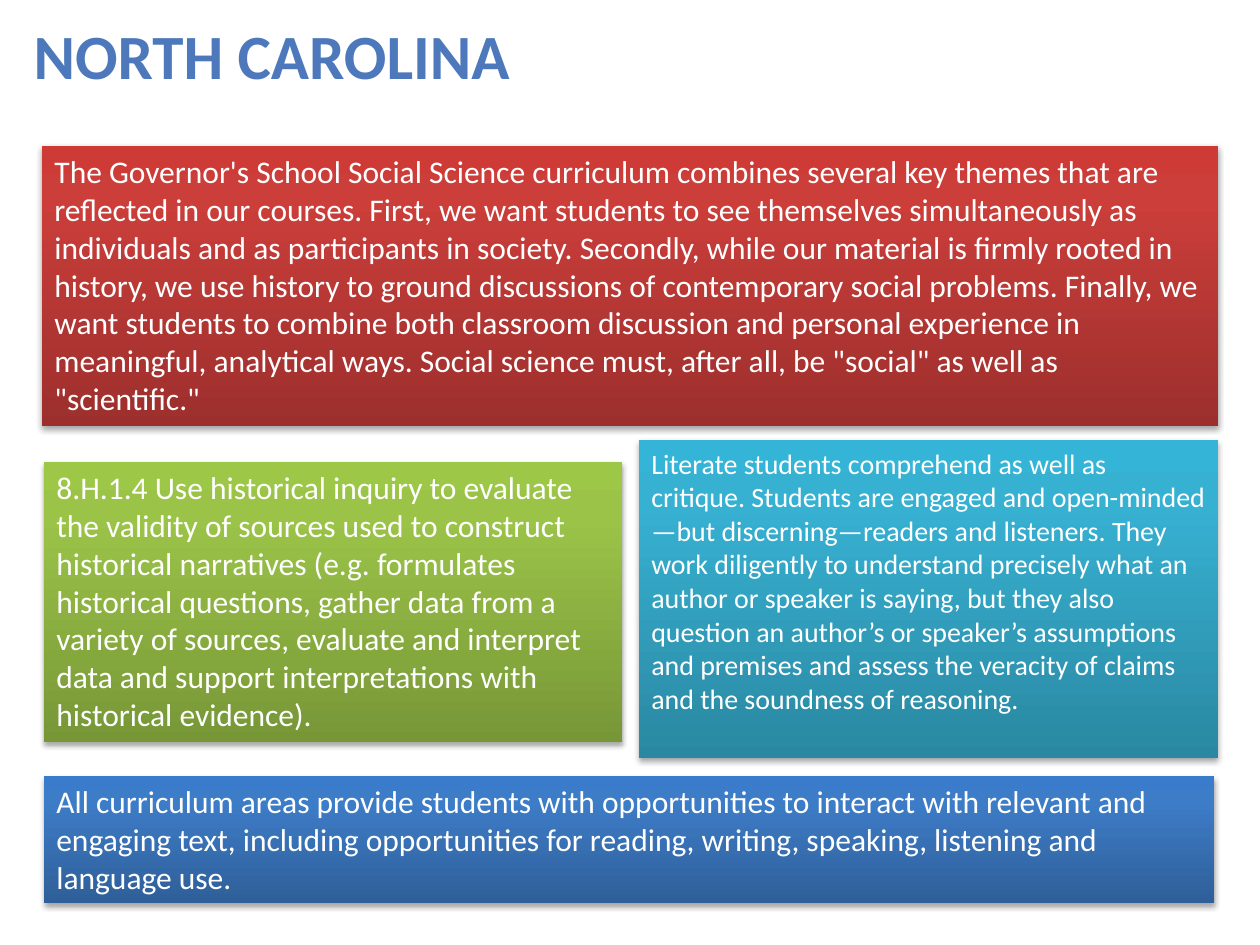
"""Build the North Carolina curriculum slide with its four standards panels."""
from dataclasses import dataclass

from lxml import etree
from pptx import Presentation
from pptx import util as u
from pptx.enum import shapes, text
from pptx.oxml import ns

SCALE = u.Inches(1) / 126
FONT = "Calibri"
COLOURS = {
    "white": "FFFFFF",
    "shadow": "000000",
    "red": ("9C2F2D", "CB3E3A", "CE3B37"),
    "green": ("779737", "9BC348", "9DC746"),
    "blue": ("2F5F99", "3D7CC7", "3A7CCB"),
    "teal": ("2A88A2", "37B1D2", "34B4D6"),
    "heading": ("7494C9", "4D79BC", "346AAA", "325F94", "315D91"),
}
PANEL_STOPS = (0, 80, 100)
HEADING_STOPS = (0, 49, 50, 92, 100)


@dataclass(frozen=True)
class Panel:
    left: int
    top: int
    width: int
    height: int
    colour: str
    wording: str
    size: int = 18


PANELS = (
    Panel(42, 146, 1176, 280, "red",
          "The Governor's School Social Science curriculum combines several key themes "
          "that are reflected in our courses. First, we want students to see themselves "
          "simultaneously as individuals and as participants in society. Secondly, while "
          "our material is firmly rooted in history, we use history to ground discussions "
          "of contemporary social problems. Finally, we want students to combine both "
          "classroom discussion and personal experience in meaningful, analytical ways. "
          "Social science must, after all, be \"social\" as well as \"scientific.\""),
    Panel(44, 462, 578, 280, "green",
          "8.H.1.4 Use historical inquiry to evaluate the validity of sources used to "
          "construct historical narratives (e.g. formulates historical questions, gather "
          "data from a variety of sources, evaluate and interpret data and support "
          "interpretations with historical evidence)."),
    Panel(44, 776, 1170, 127, "blue",
          "All curriculum areas provide students with opportunities to interact with "
          "relevant and engaging text, including opportunities for reading, writing, "
          "speaking, listening and language use."),
    Panel(639, 440, 579, 318, "teal",
          "Literate students comprehend as well as critique. Students are engaged and "
          "open-minded—but discerning—readers and listeners. They work diligently to "
          "understand precisely what an author or speaker is saying, but they also "
          "question an author’s or speaker’s assumptions and premises and assess the "
          "veracity of claims and the soundness of reasoning.", size=16),
)


def px(length: int) -> int:
    return round(length * SCALE)


def add_element(parent, tag: str, **attributes):
    return etree.SubElement(parent, ns.qn(tag), {k: str(v) for k, v in attributes.items()})


def set_gradient(fill, owner, colours: tuple, positions: tuple, angle: int) -> None:
    fill.gradient()
    fill.gradient_angle = angle
    stops = owner.find(f".//{ns.qn('a:gsLst')}")
    for stop in list(stops):
        stops.remove(stop)
    for colour, position in zip(colours, positions):
        stop = add_element(stops, "a:gs", pos=position * 1000)
        add_element(stop, "a:srgbClr", val=colour)


def add_shadow(shape) -> None:
    shape.shadow.inherit = False
    effects = shape.element.spPr.find(ns.qn("a:effectLst"))
    shadow = add_element(effects, "a:outerShdw", blurRad=u.Pt(3.1), dist=u.Pt(1.8),
                         dir=5400000, rotWithShape=0)
    colour = add_element(shadow, "a:srgbClr", val=COLOURS["shadow"])
    add_element(colour, "a:alpha", val=35000)


def write_text(shape, wording: str, *, size: int, colours: tuple, positions: tuple = (),
               bold: bool = False) -> None:
    frame = shape.text_frame
    frame.word_wrap = True
    frame.auto_size = text.MSO_AUTO_SIZE.NONE
    frame.vertical_anchor = text.MSO_ANCHOR.TOP
    paragraph = frame.paragraphs[0]
    paragraph.alignment = text.PP_ALIGN.LEFT
    run = paragraph.add_run()
    run.text = wording
    font = run.font
    font.name, font.size, font.bold = FONT, u.Pt(size), bold
    if positions:
        set_gradient(font.fill, paragraph._p, colours, positions, angle=270)
    else:
        font.fill.solid()
        font.fill.fore_color.rgb = font_colour(colours[0])


def font_colour(value: str):
    from pptx.dml.color import RGBColor
    return RGBColor.from_string(value)


def add_panel(slide, panel: Panel) -> None:
    box = slide.shapes.add_shape(shapes.MSO_SHAPE.RECTANGLE, px(panel.left), px(panel.top),
                                 px(panel.width), px(panel.height))
    set_gradient(box.fill, box.element.spPr, COLOURS[panel.colour], PANEL_STOPS, angle=90)
    box.line.fill.background()
    add_shadow(box)
    write_text(box, panel.wording, size=panel.size, colours=(COLOURS["white"],))


def main() -> None:
    deck = Presentation()
    deck.slide_width, deck.slide_height = px(1260), px(945)
    slide = deck.slides.add_slide(deck.slide_layouts[5])
    heading = slide.shapes.title
    heading.left, heading.top, heading.width, heading.height = map(px, (21, 10, 672, 89))
    write_text(heading, "NORTH CAROLINA", size=36, colours=COLOURS["heading"],
               positions=HEADING_STOPS, bold=True)
    for panel in PANELS:
        add_panel(slide, panel)
    deck.save("out.pptx")


if __name__ == "__main__":
    main()
